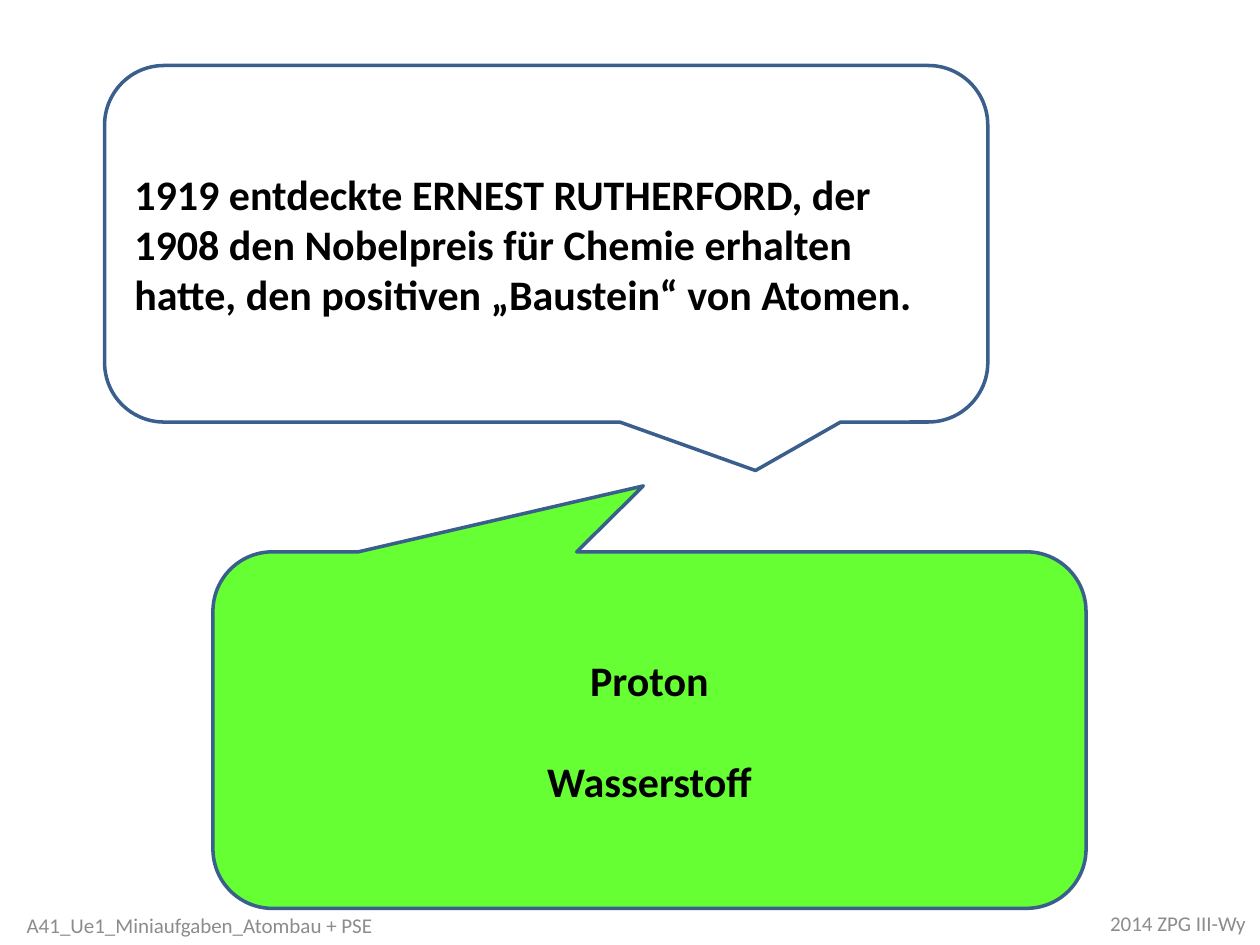
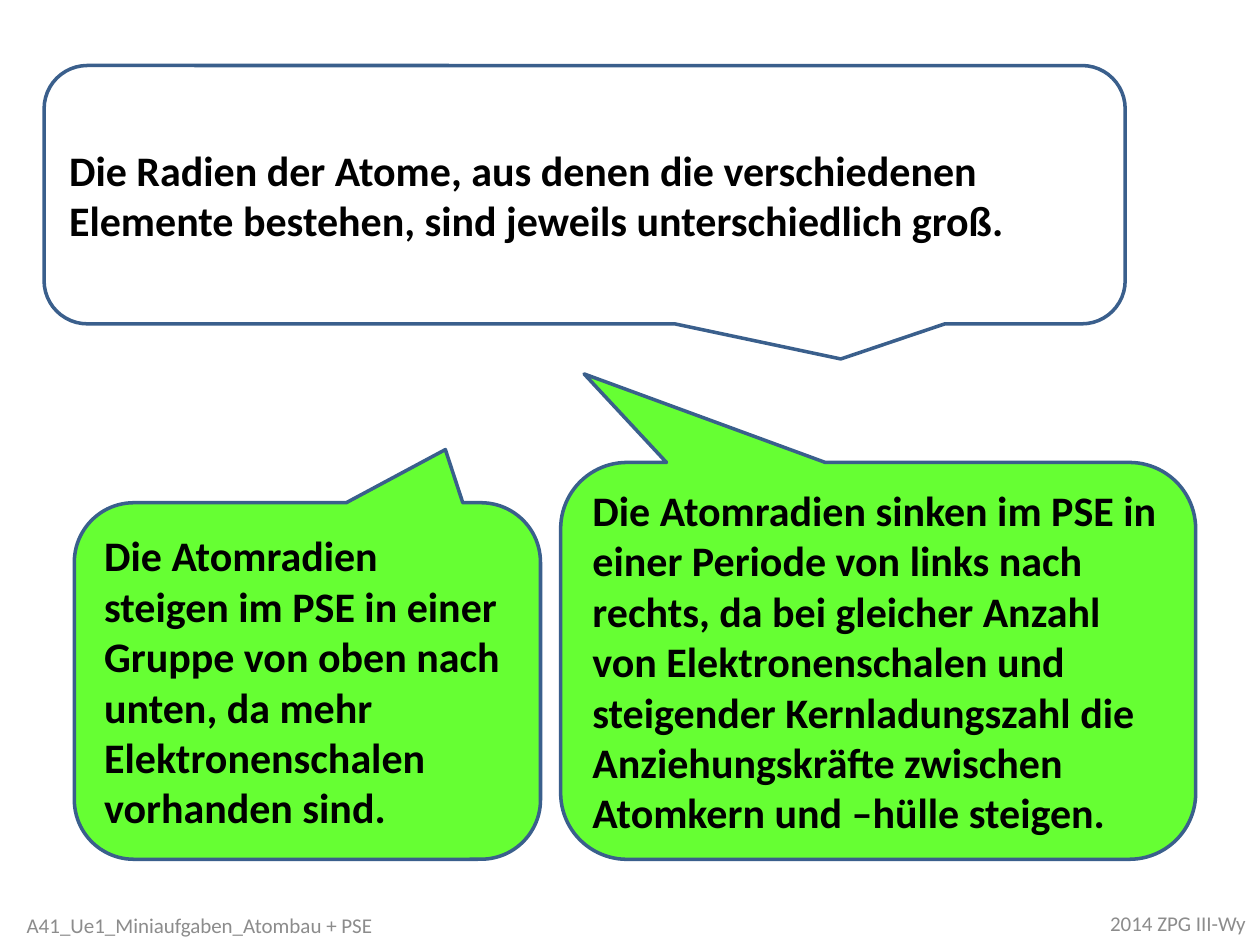
import pptx
import pptx.dml.color
import pptx.enum.shapes
import pptx.enum.text
import pptx.util
from dataclasses import dataclass

Inches = pptx.util.Inches
Pt = pptx.util.Pt
Color = pptx.dml.color.RGBColor.from_string
Align = pptx.enum.text.PP_ALIGN


@dataclass(frozen=True)
class Theme:
    font: str = "Calibri"
    question_fill: str = "FFFFFF"
    answer_fill: str = "66FF33"
    outline: str = "3A5F8C"
    outline_width: float = 2
    text: str = "000000"
    footer: str = "8C8C8C"
    text_size: int = 24
    footer_size: int = 12
    corner: float = 0.167
    answer_gap: float = 29.3


THEME = Theme()
QUESTION_POINTER = (0.237, 0.636)

# Each bubble: box (left, top, width, height), pointer tip, fill, alignment, paragraphs
SLIDES = [
    [
        ((0.83, 0.52, 7.01, 2.83), QUESTION_POINTER, THEME.question_fill, Align.LEFT,
         ["1919 entdeckte ERNEST RUTHERFORD, der 1908 den Nobelpreis für Chemie "
          "erhalten hatte, den positiven „Baustein“ von Atomen."]),
        ((1.69, 4.38, 6.93, 2.83), (-0.007, -0.685), THEME.answer_fill, Align.CENTER,
         ["Proton", "Wasserstoff"]),
    ],
    [
        ((0.59, 3.99, 3.7, 2.83), (0.296, -0.649), THEME.answer_fill, Align.LEFT,
         ["Die Atomradien steigen im PSE in einer Gruppe von oben nach unten, "
          "da mehr Elektronenschalen vorhanden sind."]),
        ((4.45, 3.67, 5.04, 3.15), (-0.463, -0.723), THEME.answer_fill, Align.LEFT,
         ["Die Atomradien sinken im PSE in einer Periode von links nach rechts, "
          "da bei gleicher Anzahl von Elektronenschalen und steigender "
          "Kernladungszahl die Anziehungskräfte zwischen Atomkern und –hülle steigen."]),
        ((0.35, 0.52, 8.58, 2.05), QUESTION_POINTER, THEME.question_fill, Align.LEFT,
         ["Die Radien der Atome, aus denen die verschiedenen Elemente bestehen, "
          "sind jeweils unterschiedlich groß."]),
    ],
]

FOOTERS = [
    ((8.7, 7.13, 1.3, 0.4), "2014 ZPG III-Wy"),
    ((0, 7.14, 3.17, 0.4), "A41_Ue1_Miniaufgaben_Atombau + PSE"),
]


def write_text(shape, lines, alignment, size, color, bold=False):
    frame = shape.text_frame
    frame.word_wrap = True
    frame.vertical_anchor = pptx.enum.text.MSO_ANCHOR.MIDDLE
    font_values = {"name": THEME.font, "size": Pt(size), "bold": bold}
    for index, line in enumerate(lines):
        paragraph = frame.add_paragraph() if index else frame.paragraphs[0]
        paragraph.alignment = alignment
        if index:
            paragraph.space_before = Pt(THEME.answer_gap)
        run = paragraph.add_run()
        run.text = line
        for name, value in font_values.items():
            setattr(run.font, name, value)
        run.font.color.rgb = Color(color)


def add_bubble(slide, box, pointer, fill, alignment, lines):
    bubble = slide.shapes.add_shape(
        pptx.enum.shapes.MSO_SHAPE.ROUNDED_RECTANGULAR_CALLOUT, *map(Inches, box))
    for index, value in enumerate((*pointer, THEME.corner)):
        bubble.adjustments[index] = value
    bubble.shadow.inherit = False
    bubble.fill.solid()
    bubble.fill.fore_color.rgb = Color(fill)
    bubble.line.color.rgb = Color(THEME.outline)
    bubble.line.width = Pt(THEME.outline_width)
    write_text(bubble, lines, alignment, THEME.text_size, THEME.text, bold=True)


def add_footers(slide):
    for box, text in FOOTERS:
        footer = slide.shapes.add_textbox(*map(Inches, box))
        write_text(footer, [text], Align.CENTER, THEME.footer_size, THEME.footer)


def main():
    presentation = pptx.Presentation()
    presentation.slide_width = Inches(10)
    presentation.slide_height = Inches(7.5)
    blank_layout = presentation.slide_layouts.get_by_name("Blank")
    for bubbles in SLIDES:
        slide = presentation.slides.add_slide(blank_layout)
        for bubble in bubbles:
            add_bubble(slide, *bubble)
        add_footers(slide)
    presentation.save("out.pptx")


if __name__ == "__main__":
    main()
